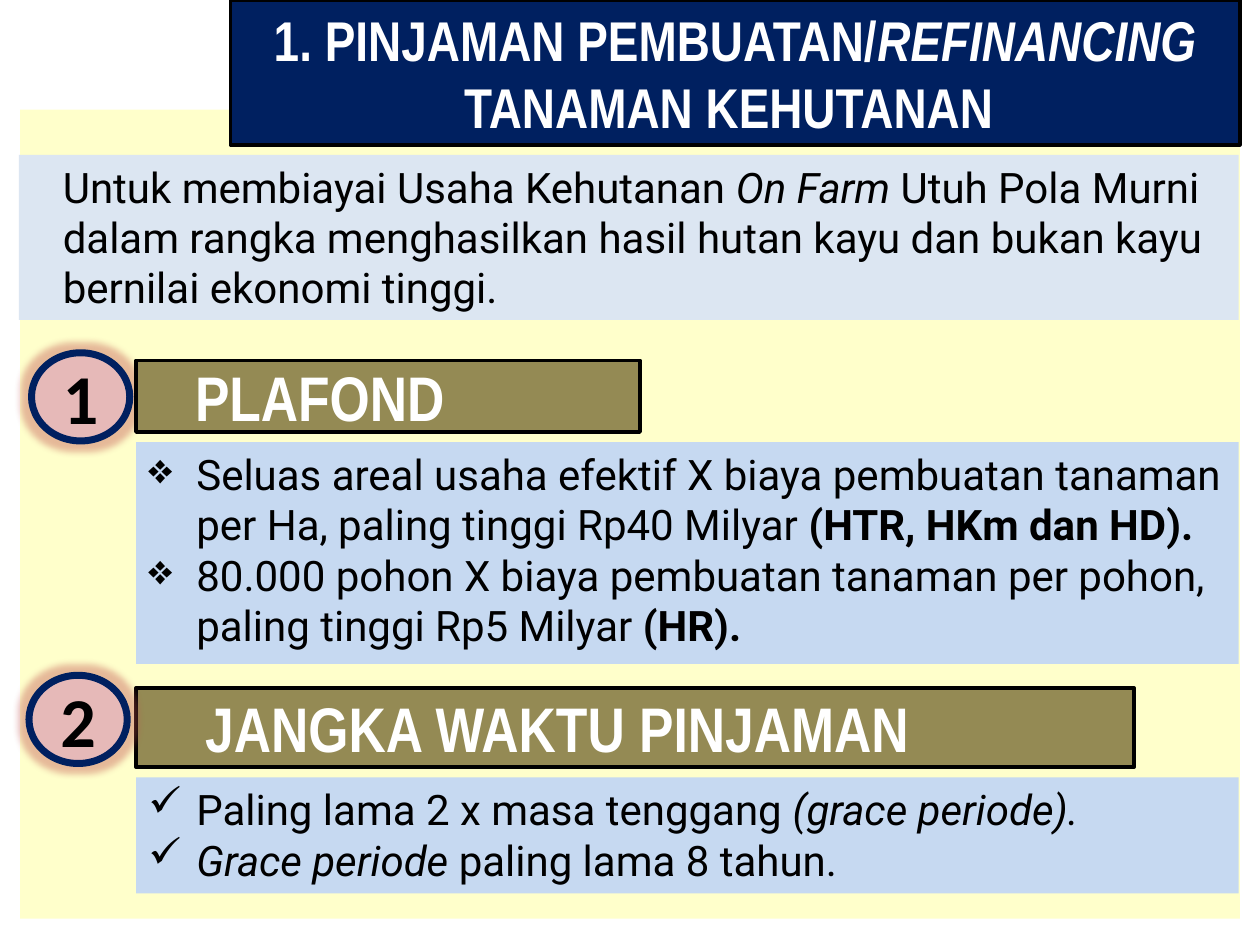
from lxml import etree
from pptx import Presentation
from pptx import util as u
from pptx.dml.color import RGBColor
from pptx.enum import shapes, text
from pptx.oxml.ns import qn

WIDE, HIGH = 10, 7.5
HUES = {
    "cream": "FFFF99", "navy": "002060", "olive": "948A54", "rose": "E6B9B8",
    "glow": "C0504D", "mist": "DCE6F2", "sky": "C6D9F1",
    "ink": "000000", "white": "FFFFFF",
}
RECT = shapes.MSO_SHAPE.RECTANGLE
OVAL = shapes.MSO_SHAPE.OVAL
MID = text.PP_ALIGN.CENTER
LEFT = text.PP_ALIGN.LEFT


def hue(name):
    return RGBColor.from_string(HUES[name])


def node(base, tag, **attrs):
    return etree.SubElement(base, qn(tag), attrs)


def panel(slide, box, fill, edge=None, width=2, kind=RECT, middle=False):
    shape = slide.shapes.add_shape(kind, *(u.Inches(side) for side in box))
    shape.shadow.inherit = False
    shape.fill.solid()
    shape.fill.fore_color.rgb = hue(fill)
    if edge:
        shape.line.color.rgb = hue(edge)
        shape.line.width = u.Pt(width)
    else:
        shape.line.fill.background()
    frame = shape.text_frame
    frame.word_wrap = True
    anchor = text.MSO_ANCHOR
    frame.vertical_anchor = anchor.MIDDLE if middle else anchor.TOP
    return shape


def write(shape, paras, size, face, color="ink", align=LEFT, indent=0, mark=None):
    frame = shape.text_frame
    for i, runs in enumerate(paras):
        para = frame.add_paragraph() if i else frame.paragraphs[0]
        props = para._p.get_or_add_pPr()
        props.set("marL", str(u.Inches(indent)))
        props.set("indent", str(u.Inches(-indent if mark else 0)))
        if mark:
            node(props, "a:buChar", char=mark)
        else:
            node(props, "a:buNone")
        para.alignment = align
        for words, style in runs:
            run = para.add_run()
            run.text = words
            font = run.font
            font.size, font.name = u.Pt(size), face
            font.color.rgb = hue(color)
            font.bold, font.italic = "b" in style, "i" in style


def back(slide, box):
    shape = panel(slide, box, "cream")
    tint = shape.fill._xPr.find(qn("a:solidFill"))[0]
    node(tint, "a:alpha", val="50000")


def intro(slide, box):
    write(panel(slide, box, "mist"), [[
        ("Untuk membiayai Usaha Kehutanan ", ""), ("On Farm ", "i"),
        ("Utuh Pola Murni dalam rangka menghasilkan hasil hutan kayu "
         "dan bukan kayu bernilai ekonomi tinggi.", ""),
    ]], 24, "Roboto", indent=0.25)


def label(slide, box, words, indent):
    shape = panel(slide, box, "olive", "ink", middle=True)
    write(shape, [[(words, "b")]], 36, "Arial Narrow", "white", indent=indent)


def points(slide, box, paras, mark):
    write(panel(slide, box, "sky"), paras, 24, "Roboto", indent=0.38, mark=mark)


def badge(slide, box, digit):
    shape = panel(slide, box, "rose", "navy", 4, OVAL, True)
    effects = shape._element.spPr.find(qn("a:effectLst"))
    halo = node(effects, "a:glow", rad=str(u.Pt(8)))
    tint = node(halo, "a:srgbClr", val=HUES["glow"])
    node(tint, "a:alpha", val="40000")
    write(shape, [[(digit, "b")]], 40, "Calibri", align=MID)


def title(slide, box):
    shape = panel(slide, box, "navy", "ink", middle=True)
    write(shape, [
        [(" 1. PINJAMAN PEMBUATAN/", "b"), ("REFINANCING ", "bi")],
        [("TANAMAN KEHUTANAN ", "b")],
    ], 32, "Arial Narrow", "white", MID)


def main():
    deck = Presentation()
    deck.slide_width, deck.slide_height = u.Inches(WIDE), u.Inches(HIGH)
    slide = deck.slides.add_slide(deck.slide_layouts[6])
    col, span = 1.08, 8.75
    back(slide, (0.16, 0.87, 9.68, 6.42))
    badge(slide, (0.25, 2.8, 0.78, 0.7), "1")
    label(slide, (col, 2.86, 4, 0.57), "PLAFOND", 0.37)
    intro(slide, (0.15, 1.23, 9.68, 1.31))
    points(slide, (col, 3.51, span, 1.76), [
        [("Seluas areal usaha efektif X biaya pembuatan tanaman per Ha, "
          "paling tinggi Rp40 Milyar ", ""), ("(HTR, HKm dan HD).", "b")],
        [("80.000 pohon X biaya pembuatan tanaman per pohon, "
          "paling tinggi Rp5 Milyar ", ""), ("(HR).", "b")],
    ], "❖")
    label(slide, (col, 5.46, 7.92, 0.63), "JANGKA WAKTU PINJAMAN", 0.45)
    points(slide, (col, 6.17, span, 0.92), [
        [("Paling lama 2 x masa tenggang ", ""), ("(grace periode).", "i")],
        [("Grace periode ", "i"), ("paling lama 8 tahun.", "")],
    ], "✓")
    badge(slide, (0.23, 5.36, 0.78, 0.7), "2")
    title(slide, (1.83, 0, 8.01, 1.15))
    deck.save("out.pptx")


if __name__ == "__main__":
    main()
